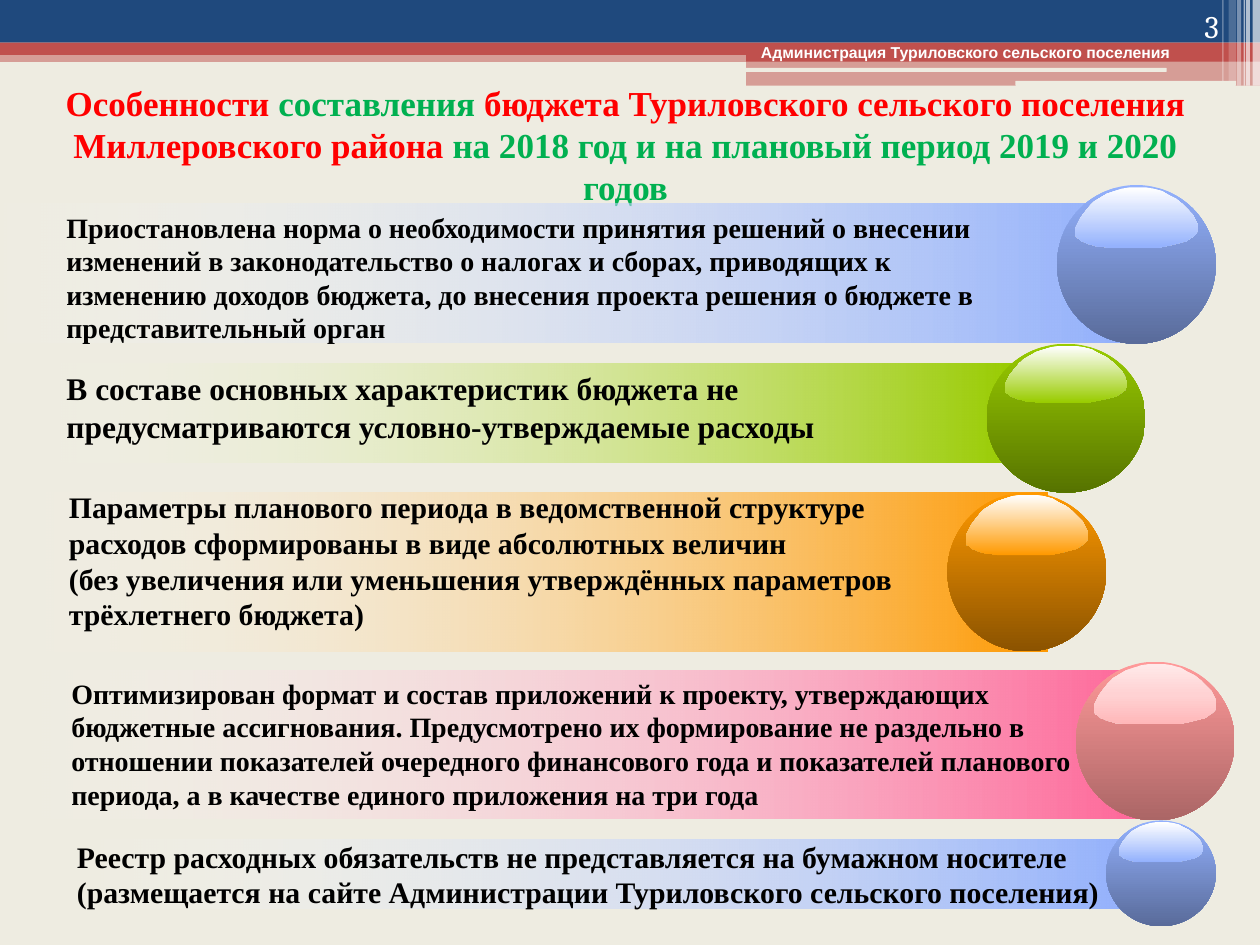
from lxml import etree
from pptx import Presentation
from pptx.dml.color import RGBColor
from pptx.enum.shapes import MSO_SHAPE
from pptx.enum.text import MSO_ANCHOR, PP_ALIGN
from pptx.oxml.ns import qn
from pptx.util import Cm, Pt

RECTANGLE = MSO_SHAPE.RECTANGLE
ROUNDED = MSO_SHAPE.ROUNDED_RECTANGLE
OVAL = MSO_SHAPE.OVAL
LEFT, CENTER, RIGHT = PP_ALIGN.LEFT, PP_ALIGN.CENTER, PP_ALIGN.RIGHT
TOP, MIDDLE, BOTTOM = MSO_ANCHOR.TOP, MSO_ANCHOR.MIDDLE, MSO_ANCHOR.BOTTOM

CREAM = RGBColor(0xEE, 0xEC, 0xE1)
NAVY = RGBColor(0x1F, 0x49, 0x7D)
BRICK = RGBColor(0xC0, 0x50, 0x4D)
WHITE = RGBColor(0xFF, 0xFF, 0xFF)
BLACK = RGBColor(0x00, 0x00, 0x00)
RED = RGBColor(0xFF, 0x00, 0x00)
GREEN = RGBColor(0x00, 0xB0, 0x50)
BLUE = RGBColor(0x93, 0xB1, 0xFD)
LIME = RGBColor(0x99, 0xCC, 0x00)
ORANGE = RGBColor(0xFF, 0x99, 0x00)
PINK = RGBColor(0xFF, 0x66, 0x99)
ROSE = RGBColor(0xFF, 0x99, 0x99)
ROSE_LIGHT = RGBColor(0xFF, 0xE9, 0xE9)
ROSE_MEDIUM = RGBColor(0xFF, 0xD2, 0xD3)
ROSE_DEEP = RGBColor(0xFF, 0xB7, 0xB9)

SERIF = "Times New Roman"

GLOSS_WIDTH, GLOSS_HEIGHT = 97, 47
GLOSS_POINTS = [
    (96, 27), (97, 29), (97, 34), (96, 36), (94, 38), (91, 40), (88, 42), (84, 43),
    (80, 44), (76, 45), (71, 46), (66, 47), (35, 47), (26, 47), (21, 46), (17, 46),
    (14, 45), (10, 44), (8, 43), (5, 42), (3, 40), (1, 39), (0, 37), (0, 32),
    (1, 30), (4, 24), (7, 20), (11, 15), (15, 11), (20, 8), (25, 5), (31, 3),
    (37, 1), (43, 0), (56, 0), (62, 1), (69, 3), (74, 6), (80, 9), (85, 13),
    (89, 17), (93, 21),
]

HEADER_BARS = [
    (RECTANGLE, (0, 1.02, 25.4, 0.23), BRICK, 50),
    (RECTANGLE, (0, 0, 25.4, 0.86), NAVY, 100),
    (RECTANGLE, (0, 0.86, 25.4, 0.25), BRICK, 100),
    (RECTANGLE, (15.04, 0.99, 10.36, 0.25), BRICK, 100),
    (RECTANGLE, (15.04, 1.22, 10.36, 0.51), BRICK, 50),
    (ROUNDED, (15.01, 1.37, 8.51, 0.08), CREAM, 100),
    (ROUNDED, (20.47, 1.63, 4.45, 0.1), CREAM, 100),
]
HEADER_STRIPES = [
    (25.25, 0.15, 1.73, 65), (25.12, 0.08, 1.73, 65), (25.07, 0.03, 1.73, 60),
    (24.94, 0.08, 1.73, 40), (24.77, 0.15, 1.63, 20), (24.64, 0.03, 1.63, 30),
]

BANDS = [
    ((-0.71, 4.11, 23.39, 2.79), BLUE),
    ((0, 7.32, 20.5, 2.01), LIME),
    ((-0.3, 9.93, 21.41, 3.2), ORANGE),
    ((0, 13.51, 23.09, 3), PINK),
    ((1.3, 16.92, 21.59, 1.4), BLUE),
]
SPHERES = [
    ((21.31, 3.73, 3.2, 3.2), BLUE, 32, [WHITE, BLUE]),
    ((19.89, 6.93, 3.2, 3), LIME, 27, [WHITE, LIME]),
    ((19.1, 9.93, 3.2, 3.2), ORANGE, 25, [WHITE, ORANGE]),
    ((21.69, 13.34, 3.2, 3.2), ROSE, 40, [ROSE_LIGHT, ROSE_MEDIUM, ROSE_DEEP]),
    ((22.3, 16.54, 2.21, 2.13), BLUE, 32, [WHITE, BLUE]),
]
STATEMENTS = [
    ((1.09, 4.11, 19.41, 3), 16,
     "Приостановлена норма о необходимости принятия решений о внесении изменений в "
     "законодательство о налогах и сборах, приводящих к изменению доходов бюджета, "
     "до внесения проекта решения о бюджете в представительный орган"),
    ((1.09, 7.32, 18.39, 1.8), 18,
     "В составе основных характеристик бюджета не предусматриваются "
     "условно-утверждаемые расходы"),
    ((1.14, 9.73, 19.61, 3.84), 17,
     "Параметры планового периода в ведомственной структуре\n"
     "расходов сформированы в виде абсолютных величин \v"
     "(без увеличения или уменьшения утверждённых параметров трёхлетнего бюджета)"),
    ((1.19, 13.51, 20.8, 3), 16,
     "Оптимизирован формат и состав приложений к проекту, утверждающих бюджетные "
     "ассигнования. Предусмотрено их формирование не раздельно в отношении "
     "показателей очередного финансового года и показателей планового периода, "
     "а в качестве единого приложения на три года"),
]
REGISTER_TEXT = (
    "Реестр расходных обязательств не представляется на бумажном носителе\n"
    "(размещается на сайте Администрации Туриловского сельского поселения)")
TITLE_PARTS = [
    ("Особенности", RED),
    (" составления ", GREEN),
    ("бюджета Туриловского сельского поселения Миллеровского района ", RED),
    ("на 2018 год и на плановый период 2019 и 2020 годов", GREEN),
]


def lengths(box):
    return [Cm(value) for value in box]


def add_modifier(color_element, name, percent):
    etree.SubElement(color_element, qn(name), val=str(percent * 1000))


def fill_solid(shape, color, opacity=100):
    shape.fill.solid()
    shape.fill.fore_color.rgb = color
    if opacity < 100:
        add_modifier(shape._element.spPr.find(".//" + qn("a:srgbClr")), "a:alpha", opacity)


def fill_gradient(shape, stops, angle):
    shape.fill.gradient()
    shape.fill.gradient_angle = angle
    stop_list = shape._element.spPr.find(".//" + qn("a:gsLst"))
    stop_list.clear()
    for index, (color, modifier) in enumerate(stops):
        position = index * 100000 // (len(stops) - 1)
        stop = etree.SubElement(stop_list, qn("a:gs"), pos=str(position))
        color_element = etree.SubElement(stop, qn("a:srgbClr"), val=str(color))
        if modifier:
            add_modifier(color_element, *modifier)


def remove_outline(shape):
    shape.shadow.inherit = False
    shape.line.fill.background()


def add_plain_shape(shapes, kind, box):
    shape = shapes.add_shape(kind, *lengths(box))
    remove_outline(shape)
    return shape


def format_run(run, size, color, font=SERIF, bold=True):
    run.font.size = Pt(size)
    run.font.name = font
    run.font.bold = bold
    run.font.color.rgb = color


def write_text(shape, text, size, color=BLACK, font=SERIF, bold=True,
               align=LEFT, anchor=TOP, wrap=True):
    frame = shape.text_frame
    frame.text = text
    frame.word_wrap = wrap
    frame.vertical_anchor = anchor
    for paragraph in frame.paragraphs:
        paragraph.alignment = align
        for run in paragraph.runs:
            format_run(run, size, color, font, bold)


def add_text(slide, box, text, size, **style):
    write_text(slide.shapes.add_textbox(*lengths(box)), text, size, **style)


def add_header(slide):
    for kind, box, color, opacity in HEADER_BARS:
        fill_solid(add_plain_shape(slide.shapes, kind, box), color, opacity)
    for left, width, height, opacity in HEADER_STRIPES:
        stripe = add_plain_shape(slide.shapes, RECTANGLE, (left, 0, width, height))
        fill_solid(stripe, WHITE, opacity)


def add_title(slide):
    frame = slide.shapes.add_textbox(*lengths((0.71, 1.52, 23.8, 2.82))).text_frame
    frame.word_wrap = True
    paragraph = frame.paragraphs[0]
    paragraph.alignment = CENTER
    for text, color in TITLE_PARTS:
        run = paragraph.add_run()
        run.text = text
        format_run(run, 20, color)


def add_band(slide, box, color):
    band = add_plain_shape(slide.shapes, RECTANGLE, box)
    fill_gradient(band, [(WHITE, ("a:alpha", 0)), (color, None)], 0)
    return band


def add_sphere(slide, box, color, shade, gloss_colors):
    group = slide.shapes.add_group_shape()
    ball = add_plain_shape(group.shapes, OVAL, box)
    fill_gradient(ball, [(color, None), (color, ("a:shade", shade))], 270)
    left, top, width, height = box
    scale = (Cm(width * 0.77) / GLOSS_WIDTH, Cm(height * 0.38) / GLOSS_HEIGHT)
    builder = group.shapes.build_freeform(*GLOSS_POINTS[0], scale=scale)
    builder.add_line_segments(GLOSS_POINTS[1:], close=True)
    gloss = builder.convert_to_shape(Cm(left + width * 0.115), Cm(top + height * 0.015))
    remove_outline(gloss)
    fill_gradient(gloss, [(gloss_color, None) for gloss_color in gloss_colors], 270)


def main():
    presentation = Presentation()
    presentation.slide_width, presentation.slide_height = Cm(25.4), Cm(19.05)
    slide = presentation.slides.add_slide(presentation.slide_layouts[6])
    fill_solid(slide.background, CREAM)
    add_header(slide)
    add_title(slide)
    for band_data, sphere_data in zip(BANDS, SPHERES):
        band = add_band(slide, *band_data)
        add_sphere(slide, *sphere_data)
    write_text(band, REGISTER_TEXT, 17, anchor=MIDDLE, wrap=False)
    for box, size, text in STATEMENTS:
        add_text(slide, box, text, size)
    add_text(slide, (15.09, 0.74, 9.3, 0.64),
             "Администрация Туриловского сельского поселения", 9, color=WHITE, font="Arial")
    add_text(slide, (22.71, 0, 2.11, 1.02), "3", 18, color=WHITE, font="Cambria",
             bold=False, align=RIGHT, anchor=BOTTOM)
    presentation.save("out.pptx")


if __name__ == "__main__":
    main()
